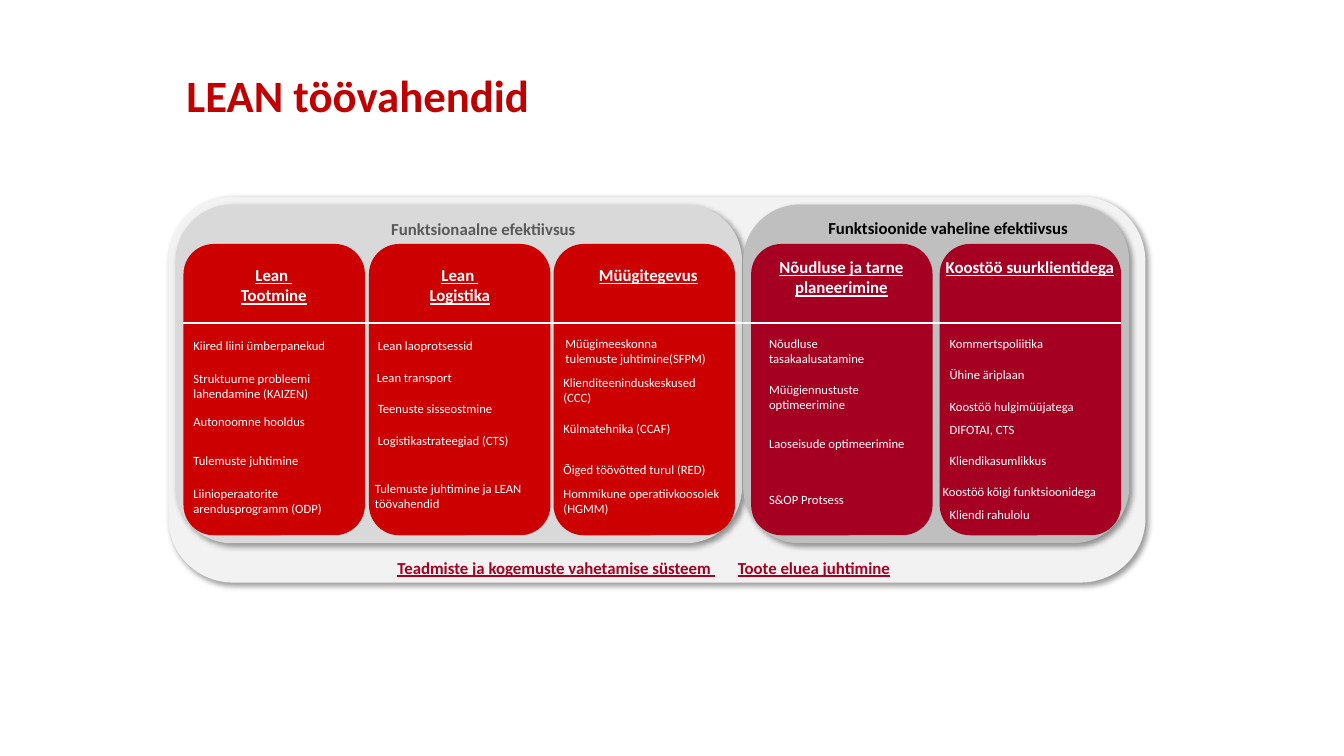
"""Build the slide of LEAN tools, grouped in five cards on two panels."""
from dataclasses import dataclass

import lxml.etree
import pptx
import pptx.dml.color
import pptx.enum.shapes
import pptx.enum.text
import pptx.oxml
import pptx.oxml.ns
import pptx.shapes.autoshape
import pptx.slide
import pptx.text.text
import pptx.util

CELL = pptx.util.Inches(0.1)
GRID_COLUMNS, GRID_ROWS = 133.3, 75
FONT = "Calibri"
COLORS = {
    "frame": "F2F2F2",
    "functional": "D9D9D9",
    "cross": "BFBFBF",
    "red": "CC0000",
    "crimson": "A50021",
    "title": "C00000",
    "grey": "595959",
    "black": "000000",
    "white": "FFFFFF",
}
CARD_TOP, CARD_WIDTH, CARD_HEIGHT = 24.2, 18, 28.9
DIVIDER_ROW = 32
TEXT_HEIGHTS = {9: (2.5, 4), 12: (3, 5.1)}


@dataclass
class Panel:
    column: float
    row: float
    width: float
    height: float
    color: str


@dataclass
class Label:
    column: float
    row: float
    width: float
    text: str
    lines: int = 1


@dataclass
class Card:
    column: float
    color: str
    heading: Label
    tools: list[Label]


PANELS = [
    Panel(16.7, 19.5, 96.9, 38.3, "frame"),
    Panel(17.4, 20.3, 56.2, 33.6, "functional"),
    Panel(73.7, 20.3, 38.3, 33.6, "cross"),
]
CARDS = [
    Card(18.2, "red", Label(17.4, 25.8, 19.5, "Lean \nTootmine", 2), [
        Label(18.2, 33, 18.7, "Kiired liini ümberpanekud"),
        Label(18.2, 36.3, 20.3, "Struktuurne probleemi lahendamine (KAIZEN)", 2),
        Label(18.2, 40.6, 19.5, "Autonoomne hooldus"),
        Label(18.2, 44.4, 21.1, "Tulemuste juhtimine"),
        Label(18.2, 47.7, 19.5, "Liinioperaatorite arendusprogramm (ODP)", 2),
    ]),
    Card(36.6, "red", Label(35.5, 25.8, 20.2, "Lean \nLogistika", 2), [
        Label(36.5, 33, 13.3, "Lean laoprotsessid"),
        Label(36.4, 36.2, 21.3, "Lean transport"),
        Label(36.5, 39.3, 15.2, "Teenuste sisseostmine"),
        Label(36.5, 42.5, 20.5, "Logistikastrateegiad (CTS)"),
        Label(36.2, 47.2, 20.9, "Tulemuste juhtimine ja LEAN töövahendid", 2),
    ]),
    Card(54.9, "red", Label(54.2, 25.8, 20.2, "Müügitegevus"), [
        Label(55.1, 32.8, 17.8, "Müügimeeskonna\ntulemuste juhtimine(SFPM)", 2),
        Label(54.9, 36.7, 18.7, "Klienditeeninduskeskused\v(CCC)", 2),
        Label(54.9, 41.3, 19.9, "Külmatehnika (CCAF)"),
        Label(54.9, 45.3, 18.7, "Õiged töövõtted turul (RED)"),
        Label(54.9, 47.7, 18.2, "Hommikune operatiivkoosolek (HGMM)", 2),
    ]),
    Card(74.5, "crimson", Label(73.7, 25, 19.5, "Nõudluse ja tarne planeerimine", 2), [
        Label(75.3, 32.8, 13.7, "Nõudluse\ntasakaalusatamine", 2),
        Label(75.3, 37.4, 16.4, "Müügiennustuste optimeerimine", 2),
        Label(75.3, 42.8, 15.6, "Laoseisude optimeerimine", 2),
        Label(75.3, 48.3, 10.4, "S&OP Protsess"),
    ]),
    Card(93.2, "crimson", Label(92.4, 25, 19.5, "Koostöö suurklientidega", 2), [
        Label(93.2, 32.8, 12.7, "Kommertspoliitika"),
        Label(93.2, 35.9, 18.7, "Ühine äriplaan"),
        Label(93.2, 39.1, 18, "Koostöö hulgimüüjatega"),
        Label(93.2, 41.4, 18, "DIFOTAI, CTS"),
        Label(93.2, 44.4, 12.9, "Kliendikasumlikkus"),
        Label(92.5, 47.5, 19.9, "Koostöö kõigi funktsioonidega"),
        Label(93.2, 49.8, 11.2, "Kliendi rahulolu"),
    ]),
]
PANEL_HEADINGS = [
    (Label(24.5, 21.2, 46.9, "Funktsionaalne efektiivsus"), "grey"),
    (Label(75.3, 21.1, 37.5, "Funktsioonide vaheline efektiivsus"), "black"),
]
FOOTER = Label(32.8, 54.8, 62.1, "")
FOOTER_LINKS = ("Teadmiste ja kogemuste vahetamise süsteem ", "Toote eluea juhtimine")
FOOTER_GAP = 13.6


def cells(count: float) -> int:
    return round(count * CELL)


def rgb(name: str) -> pptx.dml.color.RGBColor:
    return pptx.dml.color.RGBColor.from_string(COLORS[name])


def add_block(slide: pptx.slide.Slide, panel: Panel) -> pptx.shapes.autoshape.Shape:
    shape = slide.shapes.add_shape(
        pptx.enum.shapes.MSO_SHAPE.ROUNDED_RECTANGLE,
        cells(panel.column), cells(panel.row), cells(panel.width), cells(panel.height))
    shape.shadow.inherit = False
    shape.fill.solid()
    shape.fill.fore_color.rgb = rgb(panel.color)
    shape.line.fill.background()
    return shape


def add_shadow(shape: pptx.shapes.autoshape.Shape) -> None:
    effects = shape._element.spPr.find(pptx.oxml.ns.qn("a:effectLst"))
    effects.append(pptx.oxml.parse_xml(
        f'<a:outerShdw {pptx.oxml.ns.nsdecls("a")} blurRad="{pptx.util.Pt(4)}" '
        f'dist="{pptx.util.Pt(3)}" dir="2700000" algn="tl" rotWithShape="0">'
        f'<a:srgbClr val="{COLORS["black"]}"><a:alpha val="40000"/></a:srgbClr></a:outerShdw>'))


def format_text(frame: pptx.text.text.TextFrame, size: float, color: str,
                bold: bool = False, underline: bool | None = None) -> None:
    for paragraph in frame.paragraphs:
        paragraph.font.name = FONT
        paragraph.font.size = pptx.util.Pt(size)
        paragraph.font.color.rgb = rgb(color)
        paragraph.font.bold = bold
        paragraph.font.underline = underline
        if bold:
            paragraph.alignment = pptx.enum.text.PP_ALIGN.CENTER


def add_label(slide: pptx.slide.Slide, label: Label, size: int, color: str,
              bold: bool = False, underline: bool | None = None) -> pptx.text.text.TextFrame:
    height = TEXT_HEIGHTS[size][label.lines - 1]
    frame = slide.shapes.add_textbox(
        cells(label.column), cells(label.row), cells(label.width), cells(height)).text_frame
    frame.word_wrap = True
    frame.auto_size = pptx.enum.text.MSO_AUTO_SIZE.SHAPE_TO_FIT_TEXT
    frame.text = label.text
    format_text(frame, size, color, bold, underline)
    return frame


def add_title(slide: pptx.slide.Slide) -> None:
    title = slide.shapes.title
    title.left, title.top, title.width, title.height = map(cells, (16.6, 6.7, 37.8, 5.4))
    frame = title.text_frame
    frame.margin_left = frame.margin_right = frame.margin_top = frame.margin_bottom = 0
    frame.text = "LEAN töövahendid"
    format_text(frame, 32, "title", bold=True)


def add_divider(slide: pptx.slide.Slide) -> None:
    line = slide.shapes.add_connector(
        pptx.enum.shapes.MSO_CONNECTOR.STRAIGHT,
        cells(CARDS[0].column), cells(DIVIDER_ROW),
        cells(CARDS[-1].column + CARD_WIDTH), cells(DIVIDER_ROW))
    line.line.color.rgb = rgb("white")
    line.line.width = pptx.util.Pt(1.5)
    lxml.etree.SubElement(line._element.spPr, pptx.oxml.ns.qn("a:effectLst"))


def add_footer(slide: pptx.slide.Slide) -> None:
    paragraph = add_label(slide, FOOTER, 12, "crimson", bold=True).paragraphs[0]
    for text in (FOOTER_LINKS[0], " ", FOOTER_LINKS[1]):
        run = paragraph.add_run()
        run.text = text
        run.font.underline = text in FOOTER_LINKS
        if text not in FOOTER_LINKS:
            run._r.get_or_add_rPr().set("spc", str(round(FOOTER_GAP * 100)))


def main() -> None:
    presentation = pptx.Presentation()
    presentation.slide_width = cells(GRID_COLUMNS)
    presentation.slide_height = cells(GRID_ROWS)
    slide = presentation.slides.add_slide(presentation.slide_layouts.get_by_name("Title Only"))
    add_title(slide)
    for panel in PANELS:
        add_shadow(add_block(slide, panel))
    for card in CARDS:
        add_block(slide, Panel(card.column, CARD_TOP, CARD_WIDTH, CARD_HEIGHT, card.color))
        add_label(slide, card.heading, 12, "white", bold=True, underline=True)
        for tool in card.tools:
            add_label(slide, tool, 9, "white")
    add_divider(slide)
    for heading, color in PANEL_HEADINGS:
        add_label(slide, heading, 12, color, bold=True)
    add_footer(slide)
    presentation.save("out.pptx")


if __name__ == "__main__":
    main()
